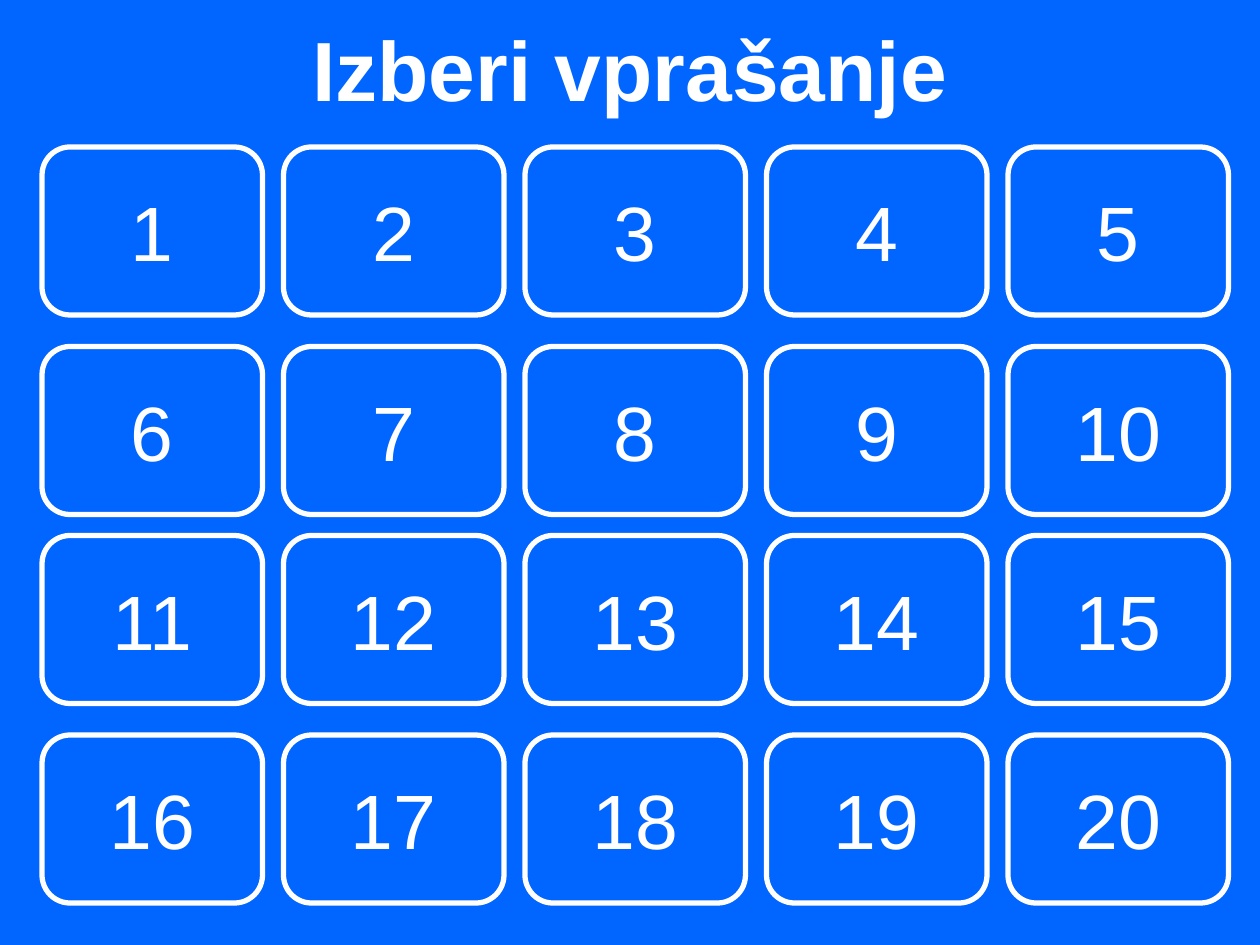
from dataclasses import dataclass
from itertools import product

from pptx import Presentation
from pptx.dml.color import RGBColor
from pptx.enum.shapes import MSO_SHAPE as Shape
from pptx.enum.text import MSO_ANCHOR as Anchor, PP_ALIGN as Align
from pptx.slide import Slide
from pptx.text.text import TextFrame
from pptx.util import Inches, Length, Pt


@dataclass(frozen=True)
class Theme:
    background: RGBColor = RGBColor(0x00, 0x66, 0xFF)
    ink: RGBColor = RGBColor(0xFF, 0xFF, 0xFF)
    font: str = "Arial"
    title_size: Length = Pt(48)
    number_size: Length = Pt(44)
    border: Length = Pt(3)
    rounding: float = 0.167


@dataclass(frozen=True)
class Cell:
    """A rectangle in grid steps of a twelfth of an inch."""
    left: float
    top: float
    width: float
    height: float

    def place(self) -> tuple[Length, ...]:
        return tuple(Inches(steps / 12)
                     for steps in (self.left, self.top, self.width, self.height))


THEME = Theme()
TITLE = Cell(6, -1, 108, 15)
COLUMNS = range(4, 97, 23)
ROWS = (14, 33, 51, 70)
BUTTON_WIDTH, BUTTON_HEIGHT = 21, 16


def write(frame: TextFrame, text: str, size: Length, bold: bool, wrap: bool) -> None:
    frame.word_wrap = wrap
    frame.vertical_anchor = Anchor.MIDDLE
    para = frame.paragraphs[0]
    para.alignment = Align.CENTER
    span = para.add_run()
    span.text = text
    span.font.color.rgb = THEME.ink
    for name, value in {"name": THEME.font, "size": size, "bold": bold}.items():
        setattr(span.font, name, value)


def draw_title(page: Slide, text: str) -> None:
    box = page.shapes.add_textbox(*TITLE.place())
    write(box.text_frame, text, THEME.title_size, bold=True, wrap=True)


def draw_button(page: Slide, cell: Cell, number: int) -> None:
    button = page.shapes.add_shape(Shape.ROUNDED_RECTANGLE, *cell.place())
    button.adjustments[0] = THEME.rounding
    button.shadow.inherit = False
    button.fill.background()
    button.line.color.rgb = THEME.ink
    button.line.width = THEME.border
    write(button.text_frame, str(number), THEME.number_size, bold=False, wrap=False)


def main() -> None:
    deck = Presentation()
    deck.slide_width, deck.slide_height = Inches(10), Inches(7.5)
    page = deck.slides.add_slide(deck.slide_layouts[6])
    page.background.fill.solid()
    page.background.fill.fore_color.rgb = THEME.background

    draw_title(page, "Izberi vprašanje")
    for number, (top, left) in enumerate(product(ROWS, COLUMNS), start=1):
        draw_button(page, Cell(left, top, BUTTON_WIDTH, BUTTON_HEIGHT), number)
    deck.save("out.pptx")


if __name__ == "__main__":
    main()
